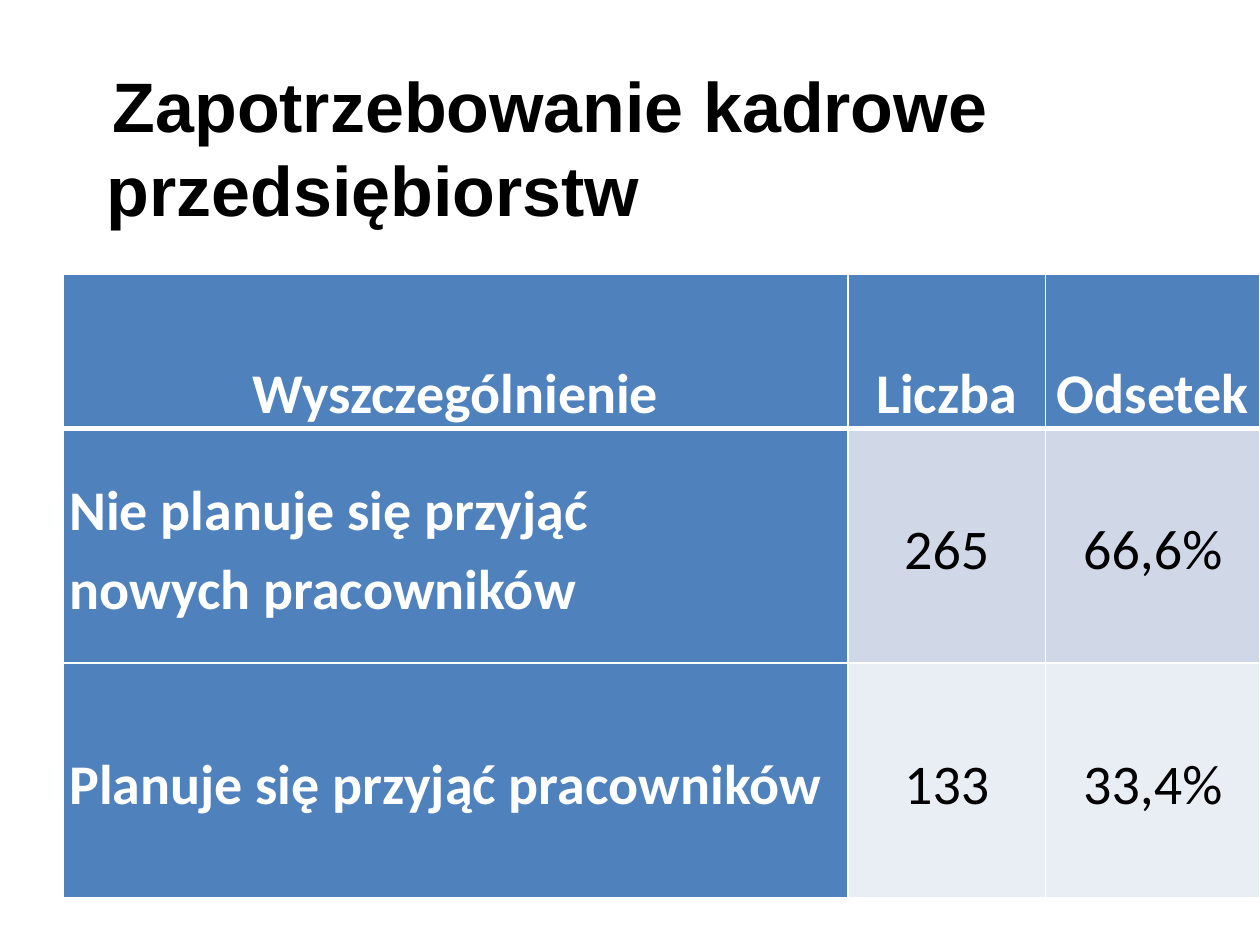
import pptx
import pptx.util
import pptx.dml.color
import pptx.enum.text
import pptx.oxml
import pptx.oxml.ns

Inches, Pt = pptx.util.Inches, pptx.util.Pt
ALIGN = pptx.enum.text.PP_ALIGN
ANCHOR = pptx.enum.text.MSO_ANCHOR

WIDE, HIGH = 10, 7.5
BLUE, WHITE, BLACK = "4F81BD", "FFFFFF", "000000"
BANDS = ["D0D8E8", "E9EDF4"]
COLS = [6.23, 1.57, 1.7]
ROWS = [1.23, 1.87, 1.87]
TITLE = ["Zapotrzebowanie kadrowe ", "przedsiębiorstw"]
DATA = [
    ["Wyszczególnienie", "Liczba", "Odsetek"],
    ["Nie planuje się przyjąć nowych pracowników", "265", "66,6%"],
    ["Planuje się przyjąć pracowników", "133", "33,4%"],
]


def color(code):
    return pptx.dml.color.RGBColor.from_string(code)


def style(run, face, size, code, bold):
    run.font.name = face
    run.font.size = Pt(size)
    run.font.color.rgb = color(code)
    run.font.bold = bold


def border(cell, widths):
    """Draw white lines; widths maps L, R, T and B to points."""
    props = cell._tc.get_or_add_tcPr()
    for place, (side, width) in enumerate(widths.items()):
        line = pptx.oxml.parse_xml(
            f'<a:ln{side} {pptx.oxml.ns.nsdecls("a")} w="{Pt(width)}">'
            f'<a:solidFill><a:srgbClr val="{WHITE}"/></a:solidFill></a:ln{side}>'
        )
        props.insert(place, line)


def title(slide, box):
    frame = slide.shapes.add_textbox(*map(Inches, box)).text_frame
    frame.word_wrap = True
    frame.auto_size = pptx.enum.text.MSO_AUTO_SIZE.SHAPE_TO_FIT_TEXT
    frame.vertical_anchor = ANCHOR.MIDDLE
    frame.text = "\n".join(TITLE)
    first = frame.paragraphs[0]
    first.text = " "
    first.add_run().text = TITLE[0]
    for para in frame.paragraphs:
        para.alignment = ALIGN.JUSTIFY
        for run in para.runs:
            style(run, "Arial", 12 if run.text == " " else 40, BLACK, True)


def fill_cell(cell, text, row, col):
    head, label = row == 0, row == 0 or col == 0
    cell.fill.solid()
    cell.fill.fore_color.rgb = color(BLUE if label else BANDS[row - 1])
    cell.margin_left = cell.margin_right = Inches(0.05)
    cell.margin_top = cell.margin_bottom = 0
    cell.vertical_anchor = ANCHOR.BOTTOM if head else ANCHOR.MIDDLE
    cell.text = text
    para = cell.text_frame.paragraphs[0]
    para.alignment = ALIGN.CENTER if head or col else ALIGN.LEFT
    para.line_spacing = 1.15
    style(para.runs[0], "Calibri", 32, WHITE if label else BLACK, label)
    border(cell, {"L": 1, "R": 1, "T": 3 if row == 1 else 1, "B": 3 if head else 1})


def table(slide, box):
    grid = slide.shapes.add_table(len(ROWS), len(COLS), *map(Inches, box)).table
    for col, width in zip(grid.columns, COLS):
        col.width = Inches(box[2] * width / sum(COLS))
    for row, height in zip(grid.rows, ROWS):
        row.height = Inches(box[3] * height / sum(ROWS))
    for row, texts in enumerate(DATA):
        for col, text in enumerate(texts):
            fill_cell(grid.cell(row, col), text, row, col)
    # A wide right margin keeps the last two words together.
    grid.cell(1, 0).margin_right = Inches(1)


def main():
    deck = pptx.Presentation()
    deck.slide_width, deck.slide_height = Inches(WIDE), Inches(HIGH)
    slide = deck.slides.add_slide(deck.slide_layouts[6])
    table(slide, (0.05 * WIDE, 0.29 * HIGH, 0.95 * WIDE, 0.66 * HIGH))
    title(slide, (0.75, 0.44, 8.16, 1.45))
    deck.save("out.pptx")


if __name__ == "__main__":
    main()
